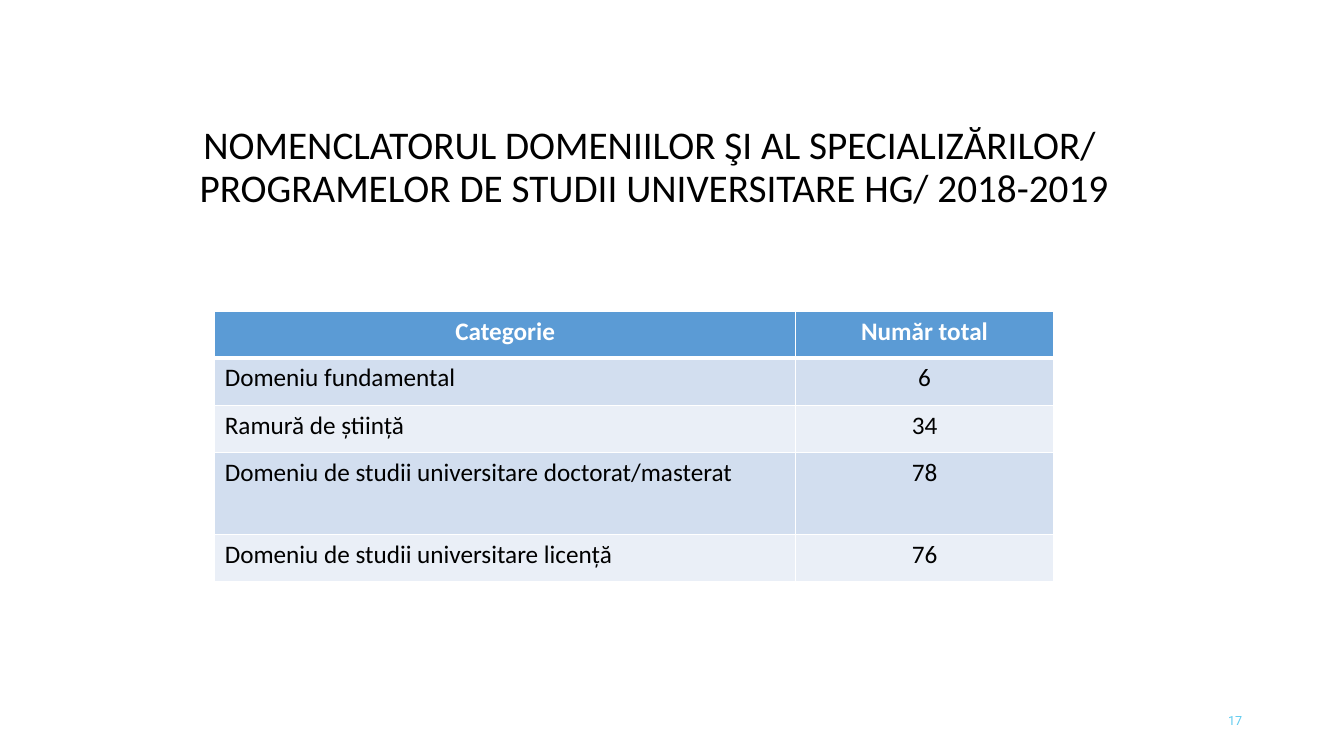
from typing import NamedTuple

from lxml.etree import SubElement
from pptx import Presentation
from pptx.dml.color import RGBColor
from pptx.enum.text import MSO_ANCHOR, MSO_AUTO_SIZE, PP_ALIGN
from pptx.oxml.ns import qn
from pptx.util import Emu, Pt

EMU_PER_PX = 9144  # 100 px to the inch
COLORS = {
    "black": "000000",
    "white": "FFFFFF",
    "header": "5B9BD5",
    "odd_row": "D2DEEF",
    "even_row": "EAEFF7",
    "page_number": "5FCBEF",
}
TITLE = (
    "NOMENCLATORUL DOMENIILOR ŞI AL SPECIALIZĂRILOR/ \n"
    "PROGRAMELOR DE STUDII UNIVERSITARE HG/ 2018-2019"
)
COLUMN_WIDTHS = (576, 256)


class Frame(NamedTuple):
    left: int
    top: int
    width: int
    height: int


class CategoryRow(NamedTuple):
    category: str
    total: str
    height: int


HEADER = CategoryRow("Categorie", "Număr total", 46)
ROWS = [
    HEADER,
    CategoryRow("Domeniu fundamental", "6", 47),
    CategoryRow("Ramură de știință", "34", 47),
    CategoryRow("Domeniu de studii universitare doctorat/masterat", "78", 81),
    CategoryRow("Domeniu de studii universitare licență", "76", 47),
]


def px(length: int) -> Emu:
    return Emu(length * EMU_PER_PX)


def color(name: str) -> RGBColor:
    return RGBColor.from_string(COLORS[name])


def write(text_frame, text: str, size: int, color_name: str, align: PP_ALIGN,
          font_name: str = "Calibri", bold: bool = False):
    """Fill the first paragraph, format it and return it."""
    para = text_frame.paragraphs[0]
    para.text = text
    para.alignment = align
    para.font.name = font_name
    para.font.size = Pt(size)
    para.font.bold = bold
    para.font.color.rgb = color(color_name)
    return para


def center_in_box(text_frame) -> None:
    """Wrap the text and centre it vertically in a box of fixed size."""
    text_frame.word_wrap = True
    text_frame.auto_size = MSO_AUTO_SIZE.NONE
    text_frame.vertical_anchor = MSO_ANCHOR.MIDDLE


def add_borders(cell, top: int, bottom: int) -> None:
    """Draw white borders; top and bottom widths are in points."""
    properties = cell._tc.get_or_add_tcPr()
    for tag, width in (("a:lnL", 1), ("a:lnR", 1), ("a:lnT", top), ("a:lnB", bottom)):
        line = SubElement(properties, qn(tag), w=str(Pt(width)))
        fill = SubElement(line, qn("a:solidFill"))
        SubElement(fill, qn("a:srgbClr"), val=COLORS["white"])


def add_title(page, frame: Frame) -> None:
    title = page.shapes.title
    title.left, title.top, title.width, title.height = map(px, frame)
    center_in_box(title.text_frame)
    para = write(title.text_frame, TITLE, 28, "black", PP_ALIGN.CENTER)
    para.line_spacing = 0.9


def add_category_table(page, frame: Frame) -> None:
    table = page.shapes.add_table(len(ROWS), len(COLUMN_WIDTHS), *map(px, frame)).table
    for column, width in zip(table.columns, COLUMN_WIDTHS):
        column.width = px(width)
    for index, row in enumerate(ROWS):
        table.rows[index].height = px(row.height)
        is_header = row is HEADER
        fill_name = "header" if is_header else "odd_row" if index % 2 else "even_row"
        for column_index, text in enumerate((row.category, row.total)):
            cell = table.cell(index, column_index)
            add_borders(cell, top=3 if index == 1 else 1, bottom=3 if is_header else 1)
            cell.fill.solid()
            cell.fill.fore_color.rgb = color(fill_name)
            centered = is_header or column_index == 1
            write(cell.text_frame, text, 18, "white" if is_header else "black",
                  PP_ALIGN.CENTER if centered else PP_ALIGN.LEFT, bold=is_header)


def add_page_number(page, frame: Frame) -> None:
    box = page.shapes.add_textbox(*map(px, frame))
    center_in_box(box.text_frame)
    write(box.text_frame, "17", 9, "page_number", PP_ALIGN.RIGHT, "Roboto")


def main() -> None:
    deck = Presentation()
    deck.slide_width, deck.slide_height = px(1333), px(750)
    page = deck.slides.add_slide(deck.slide_layouts.get_by_name("Title Only"))
    add_title(page, Frame(117, 127, 1063, 80))
    add_category_table(
        page, Frame(213, 309, sum(COLUMN_WIDTHS), sum(row.height for row in ROWS)))
    add_page_number(page, Frame(942, 695, 300, 40))
    deck.save("out.pptx")


if __name__ == "__main__":
    main()
